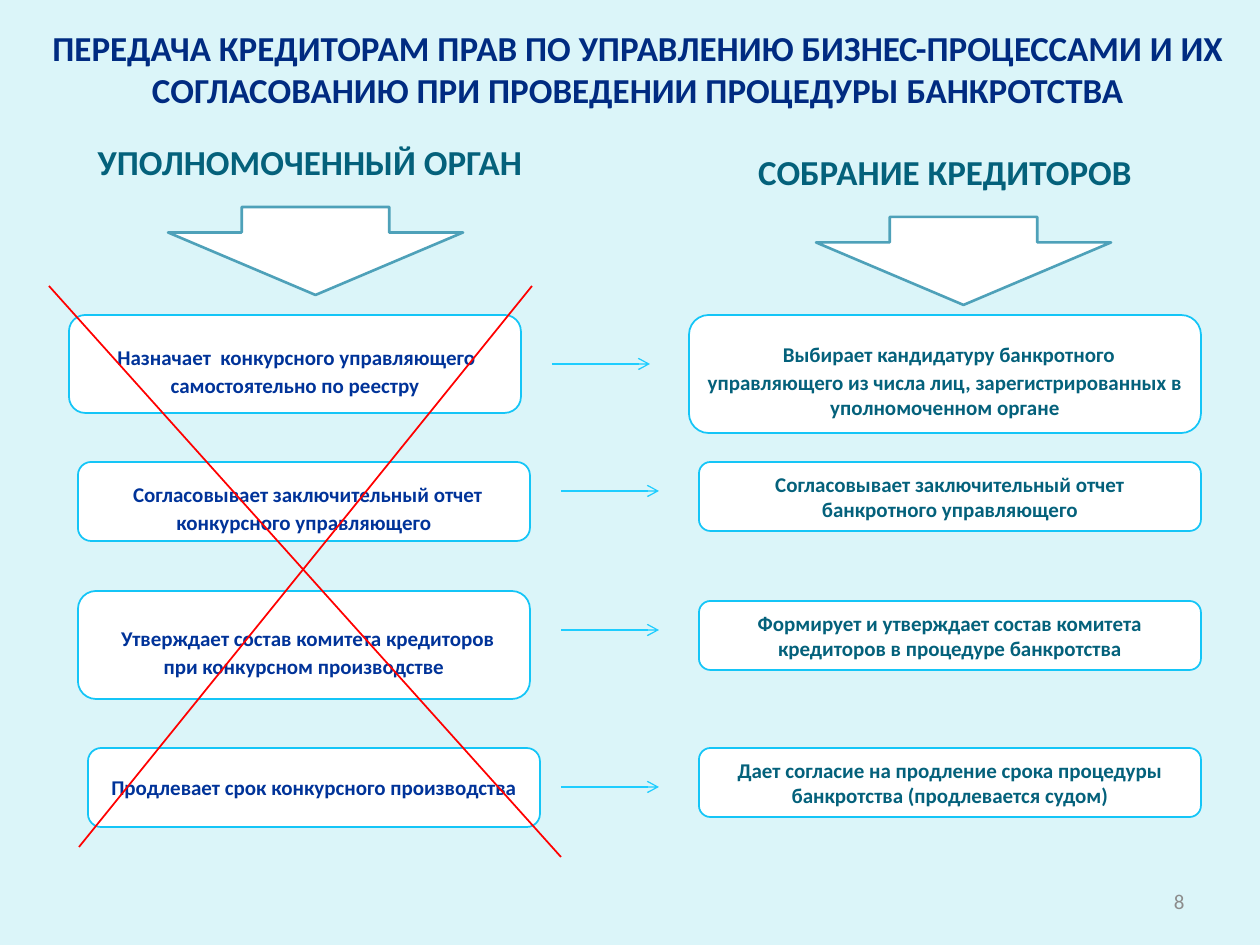
from dataclasses import dataclass

from lxml.etree import SubElement
from pptx import Presentation
from pptx.dml.color import RGBColor as RGB
from pptx.enum.shapes import MSO_CONNECTOR as Conn, MSO_SHAPE as Geom
from pptx.enum.text import MSO_ANCHOR as Anchor, MSO_AUTO_SIZE as Auto, PP_ALIGN as Align
from pptx.oxml.ns import qn
from pptx.util import Pt

SCALE = 914400 / 126


@dataclass(frozen=True)
class Theme:
    """Colours, font and type sizes of the slide."""
    back: str = "DBF5F9"
    navy: str = "002B81"
    blue: str = "003399"
    teal: str = "04617B"
    grey: str = "8C8C8C"
    white: str = "FFFFFF"
    edge: str = "14C5F7"
    rim: str = "4EA1B9"
    link: str = "1ECDFF"
    red: str = "FF0000"
    font: str = "Calibri"
    head: int = 20
    text: int = 12


THEME = Theme()

LEFT = [
    ((15, 178, 452, 98), "Назначает  конкурсного управляющего  самостоятельно по реестру", True),
    ((24, 325, 452, 79), "Согласовывает заключительный отчет конкурсного управляющего", True),
    ((24, 454, 452, 108), "Утверждает состав комитета кредиторов при конкурсном производстве", True),
    ((34, 611, 452, 79), "Продлевает срок конкурсного производства", False),
]
RIGHT = [
    ((0, 168, 512, 118), "Выбирает кандидатуру банкротного управляющего из числа лиц, "
     "зарегистрированных в уполномоченном органе", True),
    ((10, 315, 502, 69), "Согласовывает заключительный отчет\nбанкротного управляющего", False),
    ((10, 454, 502, 69), "Формирует и утверждает состав комитета кредиторов "
     "в процедуре банкротства", False),
    ((10, 601, 502, 69), "Дает согласие на продление срока процедуры банкротства "
     "(продлевается судом)", False),
]


def px(num):
    """Turn pixels into EMU."""
    return round(num * SCALE)


def apply(obj, form):
    """Set each attribute named in a dict of format values."""
    for name, value in form.items():
        setattr(obj, name, value)


def inner(box, part):
    """Shift a part by the corner of its box."""
    return part[0] + box[0], part[1] + box[1], part[2], part[3]


def write(shape, text, size, tint, bold=True, align=Align.CENTER, lead=False):
    """Fill a shape with text, one paragraph for each line."""
    frame = shape.text_frame
    apply(frame, {"word_wrap": True, "auto_size": Auto.NONE, "vertical_anchor": Anchor.MIDDLE})
    for num, line in enumerate(text.split("\n")):
        para = frame.add_paragraph() if num else frame.paragraphs[0]
        para.alignment = align
        runs = [(" ", THEME.head)] if lead else []
        for words, points in runs + [(line, size)]:
            run = para.add_run()
            run.text = words
            apply(run.font, {"name": THEME.font, "size": Pt(points), "bold": bold})
            run.font.fill.solid()
            run.font.fill.fore_color.rgb = RGB.from_string(tint)


def label(slide, box, text, size, tint, **form):
    """Add a plain text box."""
    write(slide.shapes.add_textbox(*map(px, box)), text, size, tint, **form)


def panel(slide, geom, box, edge, width):
    """Add a white outlined shape."""
    shape = slide.shapes.add_shape(geom, *map(px, box))
    shape.shadow.inherit = False
    shape.fill.solid()
    shape.fill.fore_color.rgb = RGB.from_string(THEME.white)
    shape.line.color.rgb = RGB.from_string(edge)
    shape.line.width = Pt(width)
    return shape


def stroke(slide, start, end, tint, width, arrow=False):
    """Add a straight line, with an open arrowhead if asked."""
    line = slide.shapes.add_connector(Conn.STRAIGHT, *map(px, (*start, *end)))
    line.line.color.rgb = RGB.from_string(tint)
    line.line.width = Pt(width)
    props = line.element.spPr
    if arrow:
        SubElement(props.find(qn("a:ln")), qn("a:tailEnd"), type="arrow")
    SubElement(props, qn("a:effectLst"))


def title(slide, box, text):
    """Place the slide title."""
    shape = slide.shapes.title
    apply(shape, dict(zip(("left", "top", "width", "height"), map(px, box))))
    write(shape, text, THEME.head, THEME.navy)


def column(slide, box, head, shift, cards, tint):
    """Place a heading, a block arrow and the cards below it."""
    label(slide, inner(box, (0, 0, 512, 49)), head, THEME.head, THEME.teal)
    arrow = panel(slide, Geom.DOWN_ARROW, inner(box, (shift, 70, 295, 88)), THEME.rim, 1.5)
    arrow.adjustments[0], arrow.adjustments[1] = 0.5, 0.71
    for part, text, lead in cards:
        card = panel(slide, Geom.ROUNDED_RECTANGLE, inner(box, part), THEME.edge, 1)
        write(card, text, THEME.text, tint, lead=lead)


def cross(slide, box):
    """Strike out a region with two lines."""
    x, y, w, h = box
    stroke(slide, (x + w - 29, y), (x + 30, y + h - 10), THEME.red, 1)
    stroke(slide, (x + w, y + h), (x, y), THEME.red, 1)


def links(slide, box):
    """Place the arrows between the two columns."""
    x, y, w, _ = box
    for dx, dy in ((0, 0), (9, 127), (9, 266), (9, 423)):
        start = x + dx
        stroke(slide, (start, y + dy), (start + w - 9, y + dy), THEME.link, 0.75, True)


def main():
    """Build and save the slide."""
    deck = Presentation()
    apply(deck, {"slide_width": px(1260), "slide_height": px(945)})
    slide = deck.slides.add_slide(deck.slide_layouts[5])
    slide.background.fill.solid()
    slide.background.fill.fore_color.rgb = RGB.from_string(THEME.back)
    title(slide, (35, 17, 1206, 102),
          "ПЕРЕДАЧА КРЕДИТОРАМ ПРАВ ПО УПРАВЛЕНИЮ БИЗНЕС-ПРОЦЕССАМИ И ИХ "
          "СОГЛАСОВАНИЮ ПРИ ПРОВЕДЕНИИ ПРОЦЕДУРЫ БАНКРОТСТВА")
    column(slide, (54, 137, 512, 690), "УПОЛНОМОЧЕННЫЙ ОРГАН", 114, LEFT, THEME.blue)
    column(slide, (689, 147, 512, 670), "СОБРАНИЕ КРЕДИТОРОВ", 127, RIGHT, THEME.teal)
    cross(slide, (49, 286, 512, 571))
    links(slide, (552, 364, 107, 423))
    label(slide, (903, 876, 294, 50), "8", THEME.text, THEME.grey, bold=False, align=Align.RIGHT)
    deck.save("out.pptx")


if __name__ == "__main__":
    main()
